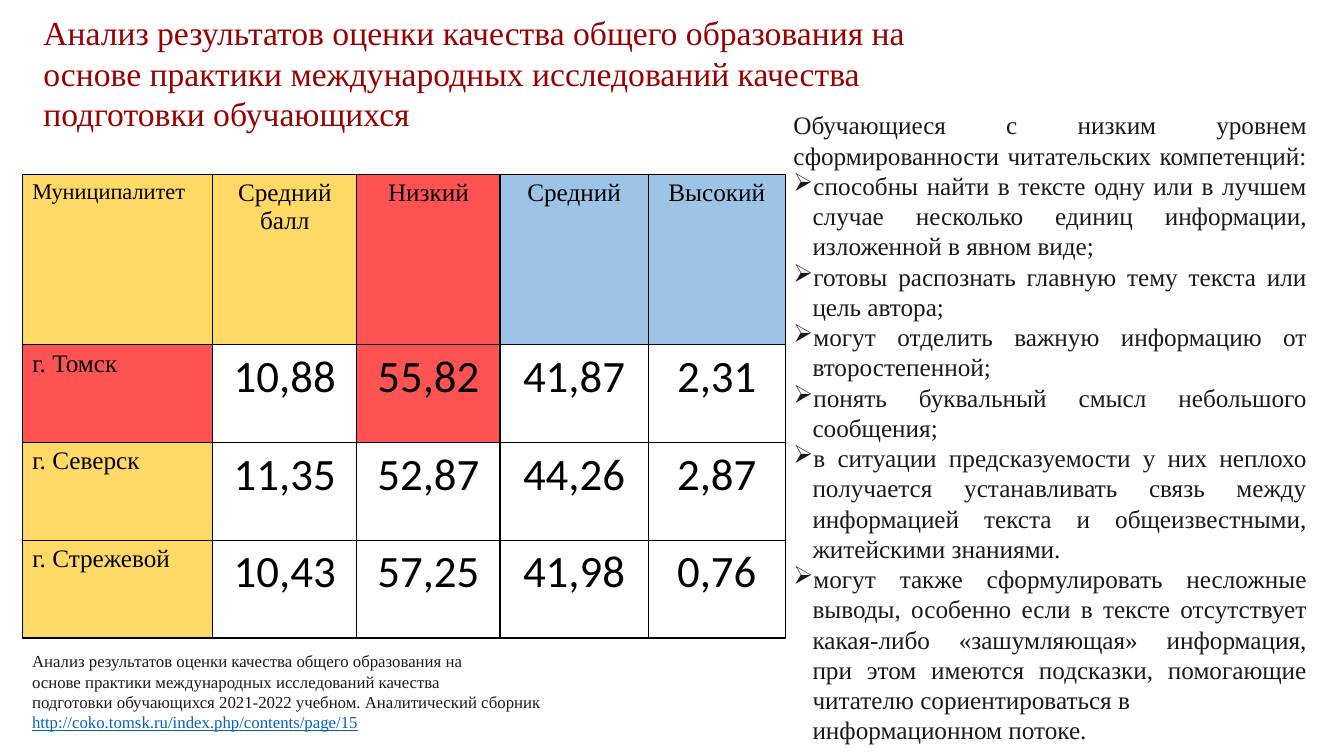
from dataclasses import dataclass

from lxml import etree
from pptx import Presentation
from pptx.dml.color import RGBColor
from pptx.enum.text import MSO_ANCHOR, PP_ALIGN
from pptx.oxml.ns import qn
from pptx.util import Inches, Pt

LEFT, CENTER, JUSTIFY = PP_ALIGN.LEFT, PP_ALIGN.CENTER, PP_ALIGN.JUSTIFY
TOP = MSO_ANCHOR.TOP


@dataclass(frozen=True)
class Theme:
    serif: str = "Times New Roman"
    sans: str = "Calibri"
    title_color: str = "990000"
    text_color: str = "1A1A1A"
    link_color: str = "0563C1"
    black: str = "000000"
    white: str = "FFFFFF"
    yellow: str = "FFD966"
    red: str = "FF5353"
    blue: str = "9DC3E6"
    title_size: int = 24
    body_size: int = 18
    corner_size: int = 16
    value_size: int = 32
    source_size: int = 12


theme = Theme()


def write_text(text_frame, text, size, color, alignment=LEFT, font_name=theme.serif):
    """Fill the frame, one paragraph per line of text, in a single style."""
    text_frame.text = text
    for paragraph in text_frame.paragraphs:
        paragraph.alignment = alignment
        for run in paragraph.runs:
            run.font.name = font_name
            run.font.size = Pt(size)
            run.font.color.rgb = RGBColor.from_string(color)


def add_borders(cell):
    properties = cell._tc.get_or_add_tcPr()
    for side in ("a:lnL", "a:lnR", "a:lnT", "a:lnB"):
        line = etree.SubElement(properties, qn(side), w=str(Pt(1)))
        fill = etree.SubElement(line, qn("a:solidFill"))
        etree.SubElement(fill, qn("a:srgbClr"), val=theme.black)


presentation = Presentation()
presentation.slide_width = Inches(13.33)
presentation.slide_height = Inches(7.5)
slide = presentation.slides.add_slide(presentation.slide_layouts[5])

# Title
title = slide.shapes.title
title.left, title.top = Inches(0.33), Inches(0.07)
title.width, title.height = Inches(10.78), Inches(1.31)
title.text_frame.vertical_anchor = TOP
write_text(
    title.text_frame,
    "Анализ результатов оценки качества общего образования на\n"
    "основе практики международных исследований качества\n"
    "подготовки обучающихся",
    theme.title_size,
    theme.title_color,
)

# Results by municipality
headers = ["Муниципалитет", "Средний\nбалл", "Низкий", "Средний", "Высокий"]
header_fills = [theme.yellow, theme.yellow, theme.red, theme.blue, theme.blue]
results = [
    ["г. Томск", "10,88", "55,82", "41,87", "2,31"],
    ["г. Северск", "11,35", "52,87", "44,26", "2,87"],
    ["г. Стрежевой", "10,43", "57,25", "41,98", "0,76"],
]
fills = [
    header_fills,
    [theme.red, theme.white, theme.red, theme.white, theme.white],
    [theme.yellow] + [theme.white] * 4,
    [theme.yellow] + [theme.white] * 4,
]
column_widths = [1.89, 1.43, 1.42, 1.47, 1.36]
row_heights = [1.69, 0.97, 0.97, 0.97]

table = slide.shapes.add_table(
    len(row_heights), len(column_widths),
    Inches(0.22), Inches(1.73), Inches(7.55), Inches(4.6),
).table
table.first_row = False
table.horz_banding = False
for column, width in zip(table.columns, column_widths):
    column.width = Inches(width)
for row, height in zip(table.rows, row_heights):
    row.height = Inches(height)

for row_index, texts in enumerate([headers] + results):
    for column_index, text in enumerate(texts):
        is_value = row_index > 0 and column_index > 0
        size = theme.value_size if is_value else theme.body_size
        if row_index == column_index == 0:
            size = theme.corner_size
        cell = table.cell(row_index, column_index)
        add_borders(cell)
        cell.fill.solid()
        cell.fill.fore_color.rgb = RGBColor.from_string(fills[row_index][column_index])
        write_text(
            cell.text_frame, text, size, theme.black,
            CENTER if column_index else LEFT,
            theme.sans if is_value else theme.serif,
        )

# Source reference
source = slide.shapes.add_textbox(Inches(0.22), Inches(6.41), Inches(7.5), Inches(0.95))
source.text_frame.word_wrap = True
write_text(
    source.text_frame,
    "Анализ результатов оценки качества общего образования на\n"
    "основе практики международных исследований качества\n"
    "подготовки обучающихся 2021-2022 учебном. Аналитический сборник\n"
    "http://coko.tomsk.ru/index.php/contents/page/15",
    theme.source_size,
    theme.text_color,
)
address_font = source.text_frame.paragraphs[-1].runs[0].font
address_font.underline = True
address_font.color.rgb = RGBColor.from_string(theme.link_color)

# Skills of students with a low level
intro = "Обучающиеся с низким уровнем сформированности читательских компетенций: "
skills = [
    "способны найти в тексте одну или в лучшем случае несколько единиц "
    "информации, изложенной в явном виде; ",
    "готовы распознать главную тему текста или цель автора; ",
    "могут отделить важную информацию от второстепенной; ",
    "понять буквальный смысл небольшого сообщения;",
    "в ситуации предсказуемости у них неплохо получается устанавливать связь "
    "между информацией текста и общеизвестными, житейскими знаниями. ",
    "могут также сформулировать несложные выводы, особенно если в тексте "
    "отсутствует какая-либо «зашумляющая» информация, при этом имеются "
    "подсказки, помогающие читателю сориентироваться в",
]
ending = "информационном потоке."

skills_box = slide.shapes.add_textbox(Inches(7.77), Inches(1.04), Inches(5.29), Inches(6.46))
skills_box.text_frame.word_wrap = True
write_text(
    skills_box.text_frame, "\n".join([intro, *skills, ending]),
    theme.body_size, theme.text_color, JUSTIFY,
)
indent = Inches(0.19)
skill_paragraphs = skills_box.text_frame.paragraphs[1:]
for paragraph in skill_paragraphs:
    paragraph._p.get_or_add_pPr().set("marL", str(indent))
for paragraph in skill_paragraphs[:-1]:
    properties = paragraph._p.get_or_add_pPr()
    properties.set("indent", str(-indent))
    etree.SubElement(properties, qn("a:buChar"), char="➢")

presentation.save("out.pptx")
